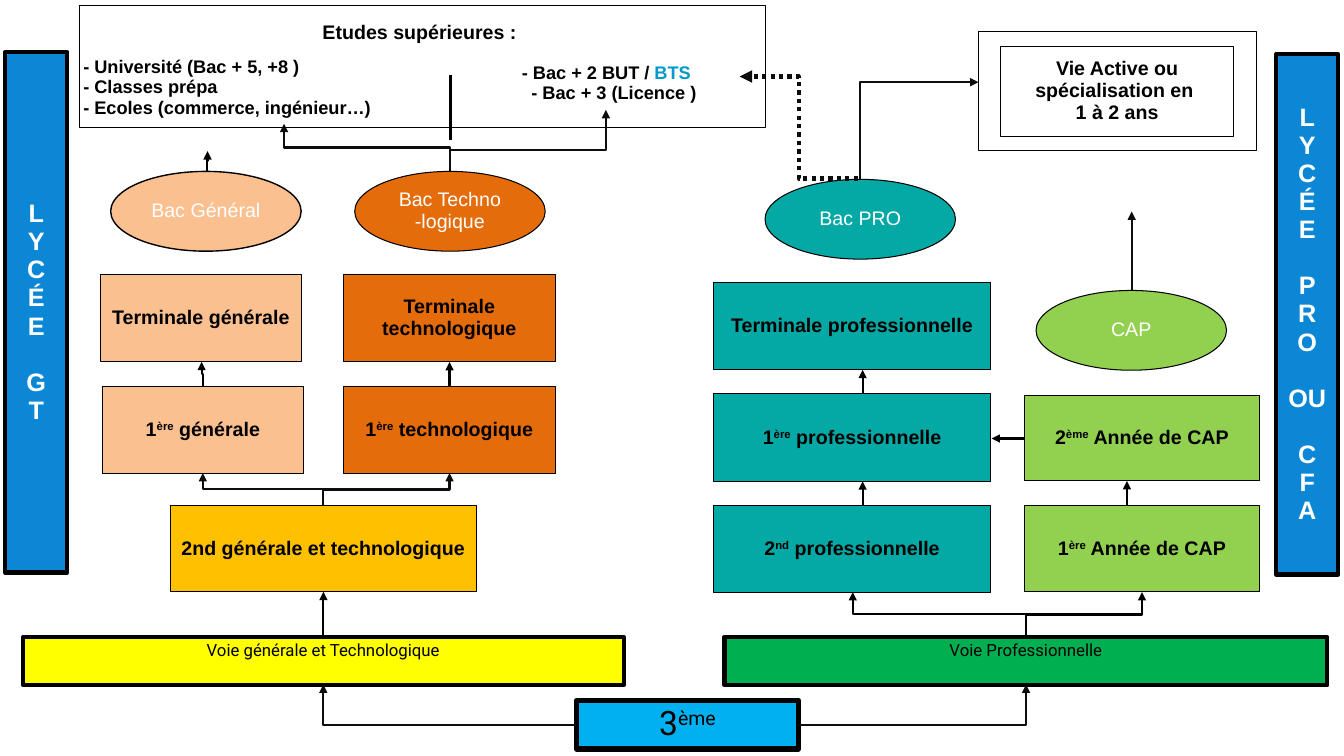
from dataclasses import dataclass

from lxml.etree import SubElement
from pptx import Presentation
from pptx.dml.color import RGBColor
from pptx.enum.dml import MSO_LINE
from pptx.enum.shapes import MSO_CONNECTOR, MSO_SHAPE
from pptx.enum.text import MSO_ANCHOR, PP_ALIGN
from pptx.oxml.ns import qn
from pptx.util import Cm, Pt


@dataclass(frozen=True)
class Theme:
    """Colours, fonts and type sizes of the slide."""
    ink: str = "000000"
    soft: str = "0D0D0D"
    white: str = "FFFFFF"
    blue: str = "0B87D6"
    sky: str = "00B0F0"
    yellow: str = "FFFF00"
    green: str = "00B050"
    gold: str = "FFC000"
    peach: str = "FAC090"
    orange: str = "E46C0A"
    teal: str = "04A8A4"
    lime: str = "92D050"
    bts: str = "0099CC"
    sans: str = "Arial"
    rounded: str = "Roboto"
    small: int = 12
    bullet: int = 13
    body: int = 14
    side: int = 18
    big: int = 24


@dataclass(frozen=True)
class Box:
    """A rectangle in centimetres."""
    x: float
    y: float
    w: float
    h: float

    def inner(self, x, y, w, h):
        """Return a rectangle placed relative to this one."""
        return Box(self.x + x, self.y + y, w, h)

    def cm(self):
        """Return left, top, width and height as lengths."""
        return Cm(self.x), Cm(self.y), Cm(self.w), Cm(self.h)


T = Theme()


def write(tf, lines, size=T.body, color=T.ink, bold=True, font=T.sans,
          align=PP_ALIGN.CENTER, anchor=MSO_ANCHOR.MIDDLE):
    """Fill a text frame; pieces between ^ marks are raised."""
    tf.word_wrap = True
    tf.vertical_anchor = anchor
    for i, line in enumerate(lines):
        p = tf.add_paragraph() if i else tf.paragraphs[0]
        p.alignment, p.line_spacing = align, 0.93
        for j, piece in enumerate(line.split("^")):
            r = p.add_run()
            r.text = piece
            r.font.size, r.font.bold, r.font.name = Pt(size), bold, font
            r.font.color.rgb = RGBColor.from_string(color)
            if j % 2:
                r.font._element.set("baseline", "30000")


def outline(sp, fill, weight):
    """Give a shape its fill and black outline, without shadow."""
    sp.shadow.inherit = False
    if fill:
        sp.fill.solid()
        sp.fill.fore_color.rgb = RGBColor.from_string(fill)
    else:
        sp.fill.background()
    sp.line.color.rgb = RGBColor.from_string(T.ink)
    sp.line.width = Pt(weight)


def card(s, box, lines, fill=None, weight=0.75, shape=MSO_SHAPE.RECTANGLE, **style):
    """Draw a labelled shape."""
    sp = s.shapes.add_shape(shape, *box.cm())
    outline(sp, fill, weight)
    write(sp.text_frame, lines, **style)
    return sp


def diploma(s, box, label, fill, weight=0.75):
    """Draw the ellipse of a diploma."""
    card(s, box, [label], fill, weight, MSO_SHAPE.OVAL, color=T.white, bold=False)


def arrow(s, box, start, end, color=T.ink, weight=1.5, first="v", corner=False,
          bend=None, dash=None, head=True):
    """Draw a straight or elbow line between two points of a box."""
    x1, y1, x2, y2 = box.x + start[0], box.y + start[1], box.x + end[0], box.y + end[1]
    straight = start[0] == end[0] or start[1] == end[1]
    turned = first == "v" and not straight
    if turned:
        cx, cy, half, rise = (x1 + x2) / 2, (y1 + y2) / 2, abs(y2 - y1) / 2, (x2 - x1) / 2
        x1, y1, x2, y2 = cx - half, cy - rise, cx + half, cy + rise
    kind = MSO_CONNECTOR.STRAIGHT if straight else MSO_CONNECTOR.ELBOW
    c = s.shapes.add_connector(kind, Cm(x1), Cm(y1), Cm(x2), Cm(y2))
    c.line.color.rgb = RGBColor.from_string(color)
    c.line.width = Pt(weight)
    if dash:
        c.line.dash_style = dash
    props = c._element.spPr
    geom = props.find(qn("a:prstGeom"))
    if turned:
        props.find(qn("a:xfrm")).set("rot", "16200000")
    if corner:
        geom.set("prst", "bentConnector2")
    if bend:
        SubElement(geom.find(qn("a:avLst")), qn("a:gd"), name="adj1", fmla=f"val {bend}")
    if head:
        SubElement(props.find(qn("a:ln")), qn("a:tailEnd"), type="triangle")
    SubElement(props, qn("a:effectLst"))


def sidebar(s, box, words):
    """Draw a side panel with its words set letter by letter."""
    rows = [row for word in words for row in word]
    sp = card(s, box, rows, T.blue, 3, size=T.side, color=T.white)
    sp.text_frame.word_wrap = False
    first = 0
    for word in words[:-1]:
        first += len(word)
        sp.text_frame.paragraphs[first].space_before = Pt(20)


def entry(s, box):
    """Draw the starting class and the two tracks it leads to."""
    style = dict(bold=False, font=T.rounded, anchor=MSO_ANCHOR.TOP)
    card(s, box.inner(13.95, 1.6, 5.59, 1.22), ["3^ème^"], T.sky, 4, size=T.big, **style)
    card(s, box.inner(0, 0, 15.14, 1.22), ["Voie générale et Technologique"],
         T.yellow, 2.75, size=T.small, **style)
    card(s, box.inner(17.68, 0, 15.19, 1.22), ["Voie Professionnelle"],
         T.green, 3, size=T.small, **style)
    for x, target in ((13.95, 7.57), (19.56, 25.28)):
        arrow(s, box, (x, 2.21), (target, 1.2), T.soft, first="h", corner=True)


def general_track(s, box):
    """Draw the general and technological classes."""
    card(s, box.inner(1.75, 8.43, 7.72, 2.16), ["2nd générale et technologique"], T.gold)
    card(s, box.inner(0.05, 5.41, 5.05, 2.21), ["1^ère^ générale"], T.peach)
    card(s, box.inner(0, 2.59, 5.05, 2.21), ["Terminale générale"], T.peach)
    diploma(s, box.inner(0.25, 0, 4.8, 2.01), "Bac Général", T.peach, 1)
    card(s, box.inner(6.12, 5.41, 5.33, 2.21), ["1^ère^ technologique"], T.orange)
    card(s, box.inner(6.12, 2.59, 5.33, 2.21), ["Terminale technologique"], T.orange)
    diploma(s, box.inner(6.4, 0, 4.8, 2.01), "Bac Techno -logique", T.orange)
    arrow(s, box, (5.61, 11.73), (5.61, 10.59))
    for x in (2.57, 8.79):
        arrow(s, box, (5.61, 8.43), (x, 7.6), T.soft)
    arrow(s, box, (2.57, 5.41), (2.54, 4.8))
    arrow(s, box, (8.79, 5.41), (8.79, 4.8))
    arrow(s, box, (2.67, 0), (2.69, -0.51))
    arrow(s, box, (8.81, -0.05), (12.73, -1.55), T.soft, bend=33400)
    arrow(s, box, (8.81, 0), (4.62, -1.2), T.soft)


def vocational_track(s, box):
    """Draw the vocational and CAP classes."""
    labels = ("Terminale professionnelle", "1^ère^ professionnelle", "2^nd^ professionnelle")
    for i, label in enumerate(labels):
        y = 2.59 + 2.81 * i
        card(s, box.inner(0, y, 6.99, 2.21), [label], T.teal)
        if i:
            arrow(s, box, (3.76, y), (3.76, y - 0.6))
    for y, label in ((5.44, "2^ème^ Année de CAP"), (8.23, "1^ère^ Année de CAP")):
        card(s, box.inner(7.83, y, 5.94, 2.16), [label], T.lime)
    diploma(s, box.inner(1.3, 0, 4.8, 2.01), "Bac PRO", T.teal)
    diploma(s, box.inner(8.13, 2.8, 4.8, 2.01), "CAP", T.lime)
    for x in (3.51, 10.8):
        arrow(s, box, (7.88, 11.53), (x, 10.4))
    arrow(s, box, (10.42, 8.23), (10.42, 7.6))
    arrow(s, box, (7.83, 6.53), (7.01, 6.53))
    arrow(s, box, (10.54, 2.8), (10.54, 0.81), T.soft)
    arrow(s, box, (3.69, 0), (6.68, -2.45), T.soft, corner=True)
    arrow(s, box, (3.64, -0.02), (0.66, -2.59), T.soft, 3, "h", dash=MSO_LINE.ROUND_DOT)


def higher_studies(s, box):
    """Draw the frame of higher studies with its two lists."""
    sp = card(s, box, ["Etudes supérieures : "], weight=0.5, anchor=MSO_ANCHOR.TOP)
    sp.text_frame.margin_top = Cm(0.43)
    universities = ["- Université (Bac + 5, +8 )", "- Classes prépa",
                    "- Ecoles (commerce, ingénieur…)"]
    tf = s.shapes.add_textbox(*box.inner(-0.16, 1.19, 10.62, 1.8).cm()).text_frame
    write(tf, universities, T.bullet, align=PP_ALIGN.LEFT, anchor=MSO_ANCHOR.TOP)
    tf = s.shapes.add_textbox(*box.inner(9.27, 1.34, 8, 1.3).cm()).text_frame
    write(tf, ["- Bac + 2 BUT / ", "- Bac + 3 (Licence )"], T.bullet, anchor=MSO_ANCHOR.TOP)
    r = tf.paragraphs[0].add_run()
    r.text = "BTS"
    r.font.size, r.font.bold, r.font.name = Pt(T.bullet), True, T.sans
    r.font.color.rgb = RGBColor.from_string(T.bts)
    tf.paragraphs[1]._p.get_or_add_pPr().set("marL", str(int(Cm(0.38))))
    arrow(s, box, (9.34, 1.75), (9.34, 3.4), weight=2, head=False)


def working_life(s, box):
    """Draw the double frame of working life."""
    frames = (box, box.inner(0.56, 0.38, box.w - 1.12, box.h - 0.74))
    fb = s.shapes.build_freeform(Cm(box.x), Cm(box.y))
    for i, frame in enumerate(frames):
        x, y, w, h = frame.cm()
        if i:
            fb.move_to(x, y)
        fb.add_line_segments([(x + w, y), (x + w, y + h), (x, y + h)], close=True)
    sp = fb.convert_to_shape()
    outline(sp, None, 0.5)
    write(sp.text_frame, ["Vie Active ou spécialisation en ", "1 à 2 ans"])


def main():
    """Build the slide and save it."""
    prs = Presentation()
    prs.slide_width, prs.slide_height = Cm(33.87), Cm(19.05)
    s = prs.slides.add_slide(prs.slide_layouts[6])
    entry(s, Box(0.58, 16.05, 32.87, 2.82))
    sidebar(s, Box(0.13, 1.32, 1.57, 13.11), ["LYCÉE", "GT"])
    sidebar(s, Box(32.16, 1.37, 1.57, 13.11), ["LYCÉE", "PRO", ["OU"], "CFA"])
    general_track(s, Box(2.54, 4.32, 11.45, 10.6))
    vocational_track(s, Box(17.98, 4.52, 13.77, 10.42))
    working_life(s, Box(24.66, 0.79, 6.99, 3))
    higher_studies(s, Box(2.01, 0.13, 17.27, 3.07))
    prs.save("out.pptx")


if __name__ == "__main__":
    main()
